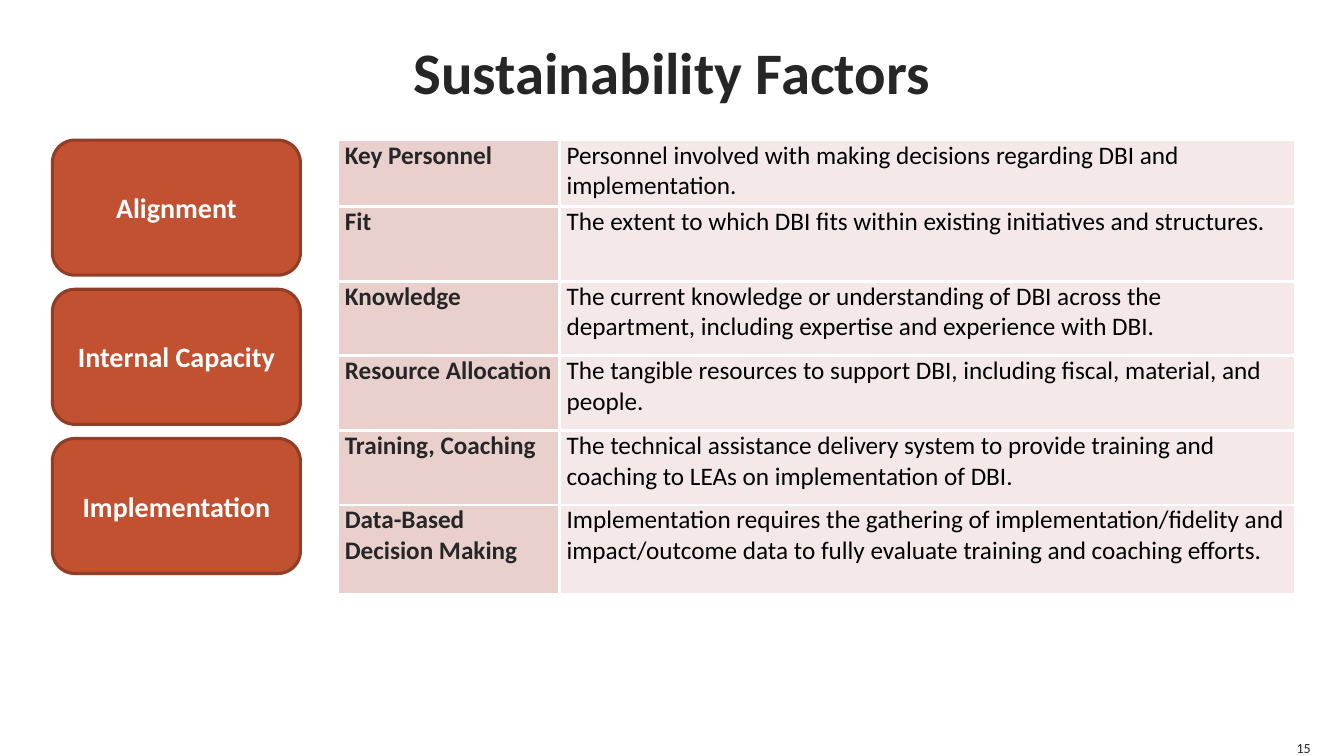
from lxml import etree
from pptx import Presentation
from pptx.dml.color import RGBColor as RGB
from pptx.enum.shapes import MSO_SHAPE as Shape
from pptx.enum.text import MSO_ANCHOR as Anchor, PP_ALIGN as Align
from pptx.oxml import parse_xml
from pptx.oxml.ns import nsdecls
from pptx.util import Pt

PX = 9144  # 100 px to the inch
COLORS = {
    "ink": "262626", "black": "000000", "white": "FFFFFF",
    "rust": "C25131", "edge": "923D25",
    "rose": "E9D0CD", "blush": "F4E9E8",
}


def color(name):
    return RGB.from_string(COLORS[name])


def write(frame, text, size, ink, bold=False, align=Align.LEFT, anchor=Anchor.TOP, pad=(0, 0)):
    """Fill a text frame with one run; pad is (side, top and bottom) in px."""
    frame.word_wrap = True
    frame.vertical_anchor = anchor
    frame.margin_left = frame.margin_right = pad[0] * PX
    frame.margin_top = frame.margin_bottom = pad[1] * PX
    para = frame.paragraphs[0]
    para.alignment = align
    run = para.add_run()
    run.text = text
    run.font.name = "Calibri"
    run.font.size = Pt(size)
    run.font.bold = bold
    run.font.color.rgb = color(ink)


deck = Presentation()
deck.slide_width, deck.slide_height = 1333 * PX, 750 * PX
slide = deck.slides.add_slide(deck.slide_layouts[6])
shapes = slide.shapes

# Title
title = shapes.add_textbox(50 * PX, 0, 1233 * PX, 140 * PX)
write(title.text_frame, "Sustainability Factors", 42, "ink", True, Align.CENTER, Anchor.MIDDLE)

# Factor groups
TOP, STEP = 139, 148
for i, name in enumerate(["Alignment", "Internal Capacity", "Implementation"]):
    box = shapes.add_shape(Shape.ROUNDED_RECTANGLE, 52 * PX, (TOP + i * STEP) * PX, 246 * PX, 134 * PX)
    box.shadow.inherit = False
    box.fill.solid()
    box.fill.fore_color.rgb = color("rust")
    box.line.color.rgb = color("edge")
    box.line.width = Pt(2.25)
    write(box.text_frame, name, 20, "white", True, Align.CENTER, Anchor.MIDDLE, (10, 5))

# Factor table
factors = [
    ("Key Personnel", "Personnel involved with making decisions regarding DBI and implementation."),
    ("Fit", "The extent to which DBI fits within existing initiatives and structures."),
    ("Knowledge", "The current knowledge or understanding of DBI across the department, "
     "including expertise and experience with DBI."),
    ("Resource Allocation", "The tangible resources to support DBI, including fiscal, material, and people."),
    ("Training, Coaching", "The technical assistance delivery system to provide training and "
     "coaching to LEAs on implementation of DBI."),
    ("Data-Based Decision Making", "Implementation requires the gathering of implementation/fidelity "
     "and impact/outcome data to fully evaluate training and coaching efforts."),
]
widths = [220, 730]
heights = [66, 74, 74, 74, 74, 89]
styles = [("rose", "ink", True), ("blush", "black", False)]

table = shapes.add_table(len(factors), 2, 335 * PX, TOP * PX, sum(widths) * PX, sum(heights) * PX).table
table.first_row = table.horz_banding = False
for col, width in zip(table.columns, widths):
    col.width = width * PX
for row, height, texts in zip(table.rows, heights, factors):
    row.height = height * PX
    for cell, text, (fill, ink, bold) in zip(row.cells, texts, styles):
        write(cell.text_frame, text, 18, ink, bold)
        cell.margin_left = cell.margin_right = 7 * PX
        cell.margin_top = cell.margin_bottom = 0
        props = cell._tc.get_or_add_tcPr()
        for side in "LRTB":
            line = parse_xml(f'<a:ln{side} {nsdecls("a")} w="{Pt(2.25)}"/>')
            paint = etree.SubElement(line, line.tag.replace(f"ln{side}", "solidFill"))
            etree.SubElement(paint, paint.tag.replace("solidFill", "srgbClr"), val=COLORS["white"])
            props.append(line)
        cell.fill.solid()
        cell.fill.fore_color.rgb = color(fill)

# Slide number
number = shapes.add_textbox(1283 * PX, 733 * PX, 17 * PX, 17 * PX)
write(number.text_frame, "15", 10, "ink", align=Align.RIGHT, anchor=Anchor.BOTTOM)

deck.save("out.pptx")
